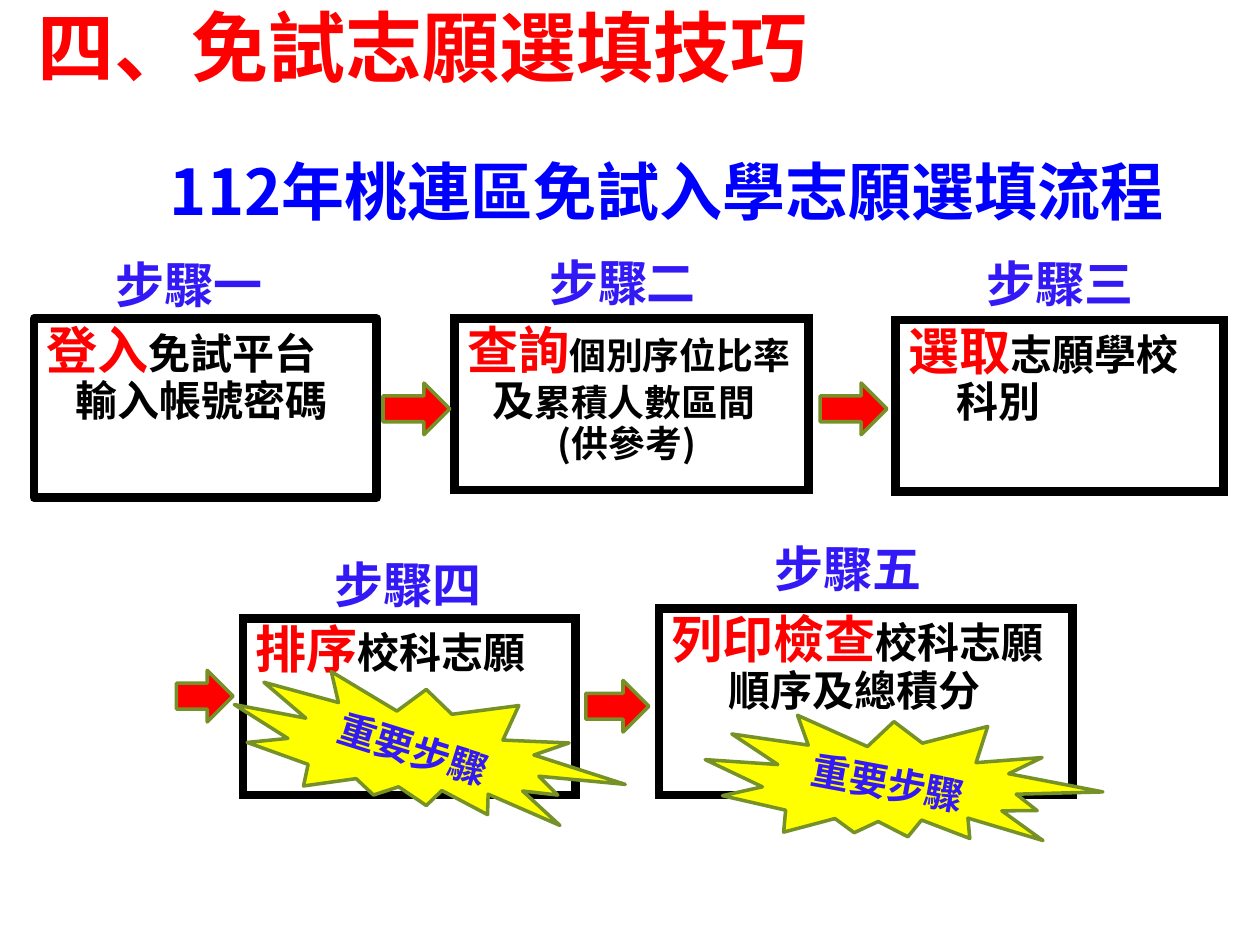
from dataclasses import dataclass

from lxml.etree import SubElement
from pptx import Presentation
from pptx.dml.color import RGBColor
from pptx.enum.shapes import MSO_SHAPE
from pptx.enum.text import MSO_ANCHOR, MSO_AUTO_SIZE, PP_ALIGN
from pptx.oxml.ns import qn
from pptx.shapes.autoshape import Shape
from pptx.slide import Slide
from pptx.text.text import _Paragraph as Paragraph
from pptx.util import Inches, Pt

FONT = "Noto Sans CJK SC"
RED, BLUE, VIOLET, BLACK = "FF0000", "0000FF", "3319F5", "000000"
YELLOW, WHITE, OLIVE = "FFFF00", "FFFFFF", "769127"


@dataclass
class Box:
    left: float
    top: float
    width: float
    height: float


@dataclass
class Line:
    runs: list[tuple[str, float]]
    indent: float


@dataclass
class Step:
    label: str
    label_box: Box
    box: Box
    keyword: str
    rest: str
    size: float
    lines: list[Line]
    mitered: bool = True


STEPS = [
    Step("步驟一", Box(0.82, 1.99, 1.38, 0.53), Box(0.27, 2.53, 2.72, 1.42),
         "登入", "免試平台", 24, [Line([("輸入帳號密碼", 24)], 0.23)], False),
    Step("步驟二", Box(4.26, 1.97, 1.78, 0.53), Box(3.61, 2.53, 2.81, 1.36),
         "查詢", "個別序位比率", 21,
         [Line([("及", 24), ("累積人數區間", 21)], 0.2), Line([("(供參考)", 21)], 0.72)]),
    Step("步驟三", Box(7.73, 1.98, 1.54, 0.53), Box(7.11, 2.54, 2.6, 1.36),
         "選取", "志願學校", 24, [Line([("科別", 24)], 0.38)]),
    Step("步驟四", Box(2.56, 4.37, 1.7, 0.53), Box(1.93, 4.91, 2.64, 1.4),
         "排序", "校科志願", 24, []),
    Step("步驟五", Box(6.05, 4.24, 1.68, 0.53), Box(5.23, 4.83, 3.28, 1.48),
         "列印檢查", "校科志願", 24, [Line([("順序及總積分", 24)], 0.45)]),
]
ARROWS = [
    Box(3.04, 3.04, 0.53, 0.41),
    Box(6.51, 3.04, 0.53, 0.41),
    Box(1.4, 5.32, 0.45, 0.41),
    Box(4.65, 5.4, 0.5, 0.41),
]
SEALS = [(Box(1.82, 5.4, 3.15, 1.12), 17.4), (Box(5.59, 5.65, 3.15, 1.12), 10.5)]


def color(value: str) -> RGBColor:
    return RGBColor.from_string(value)


def place(box: Box) -> tuple[int, int, int, int]:
    return Inches(box.left), Inches(box.top), Inches(box.width), Inches(box.height)


def format_runs(paragraph: Paragraph, size: float, hex_color: str) -> None:
    for run in paragraph.runs:
        format_run(run, size, hex_color)


def format_run(run, size: float, hex_color: str) -> None:
    run.font.size = Pt(size)
    run.font.bold = True
    run.font.name = FONT
    run.font.color.rgb = color(hex_color)
    east_asian = SubElement(run.font._element, qn("a:ea"))
    east_asian.set("typeface", FONT)


def add_run(paragraph: Paragraph, text: str, size: float, hex_color: str) -> None:
    run = paragraph.add_run()
    run.text = text
    format_run(run, size, hex_color)


def add_preset(slide: Slide, preset: MSO_SHAPE, box: Box, fill: str | None,
               line: str, line_width: float) -> Shape:
    shape = slide.shapes.add_shape(preset, *place(box))
    shape.shadow.inherit = False
    if fill:
        shape.fill.solid()
        shape.fill.fore_color.rgb = color(fill)
    else:
        shape.fill.background()
    shape.line.color.rgb = color(line)
    shape.line.width = Pt(line_width)
    return shape


def add_text(slide: Slide, box: Box, text: str, size: float, hex_color: str) -> Shape:
    shape = slide.shapes.add_textbox(*place(box))
    text_frame = shape.text_frame
    text_frame.word_wrap = True
    text_frame.vertical_anchor = MSO_ANCHOR.MIDDLE
    text_frame.text = text
    format_runs(text_frame.paragraphs[0], size, hex_color)
    return shape


def add_step(slide: Slide, step: Step) -> None:
    shape = add_preset(slide, MSO_SHAPE.RECTANGLE, step.box, None, BLACK, 5)
    if step.mitered:
        SubElement(shape.line._get_or_add_ln(), qn("a:miter")).set("lim", "800000")
    text_frame = shape.text_frame
    text_frame.word_wrap = True
    text_frame.vertical_anchor = MSO_ANCHOR.TOP
    first = text_frame.paragraphs[0]
    add_run(first, step.keyword, 29.2, RED)
    add_run(first, step.rest, step.size, BLACK)
    for line in step.lines:
        paragraph = text_frame.add_paragraph()
        paragraph._p.get_or_add_pPr().set("marL", str(Inches(line.indent)))
        for text, size in line.runs:
            add_run(paragraph, text, size, BLACK)
    for paragraph in text_frame.paragraphs:
        paragraph.alignment = PP_ALIGN.LEFT
        paragraph.line_spacing = 0.9
    add_text(slide, step.label_box, step.label, 28, VIOLET)


def add_seal(slide: Slide, box: Box, rotation: float) -> None:
    shape = add_preset(slide, MSO_SHAPE.EXPLOSION2, box, YELLOW, OLIVE, 2)
    shape.rotation = rotation
    text_frame = shape.text_frame
    text_frame.margin_left = text_frame.margin_right = 0
    text_frame.margin_top = text_frame.margin_bottom = 0
    text_frame.vertical_anchor = MSO_ANCHOR.MIDDLE
    text_frame.text = "重要步驟"
    text_frame.paragraphs[0].alignment = PP_ALIGN.CENTER
    format_runs(text_frame.paragraphs[0], 22, VIOLET)


def format_title(title: Shape) -> None:
    title.left, title.top, title.width, title.height = place(Box(0.2, -0.02, 9.45, 0.77))
    title.fill.solid()
    title.fill.fore_color.rgb = color(WHITE)
    text_frame = title.text_frame
    text_frame.text = "四、免試志願選填技巧"
    text_frame.auto_size = MSO_AUTO_SIZE.NONE
    text_frame.vertical_anchor = MSO_ANCHOR.MIDDLE
    text_frame.paragraphs[0].alignment = PP_ALIGN.LEFT
    format_runs(text_frame.paragraphs[0], 44, RED)


def main() -> None:
    presentation = Presentation()
    presentation.slide_width, presentation.slide_height = Inches(10), Inches(7.5)
    slide = presentation.slides.add_slide(presentation.slide_layouts[5])
    format_title(slide.shapes.title)
    for step in STEPS:
        add_step(slide, step)
    subtitle = add_text(slide, Box(1.25, 1.17, 8.19, 0.77),
                        "112年桃連區免試入學志願選填流程", 36, BLUE)
    subtitle.text_frame.paragraphs[0].line_spacing = 0.85
    for arrow in ARROWS:
        add_preset(slide, MSO_SHAPE.RIGHT_ARROW, arrow, RED, OLIVE, 2)
    for box, rotation in SEALS:
        add_seal(slide, box, rotation)
    presentation.save("out.pptx")


if __name__ == "__main__":
    main()
